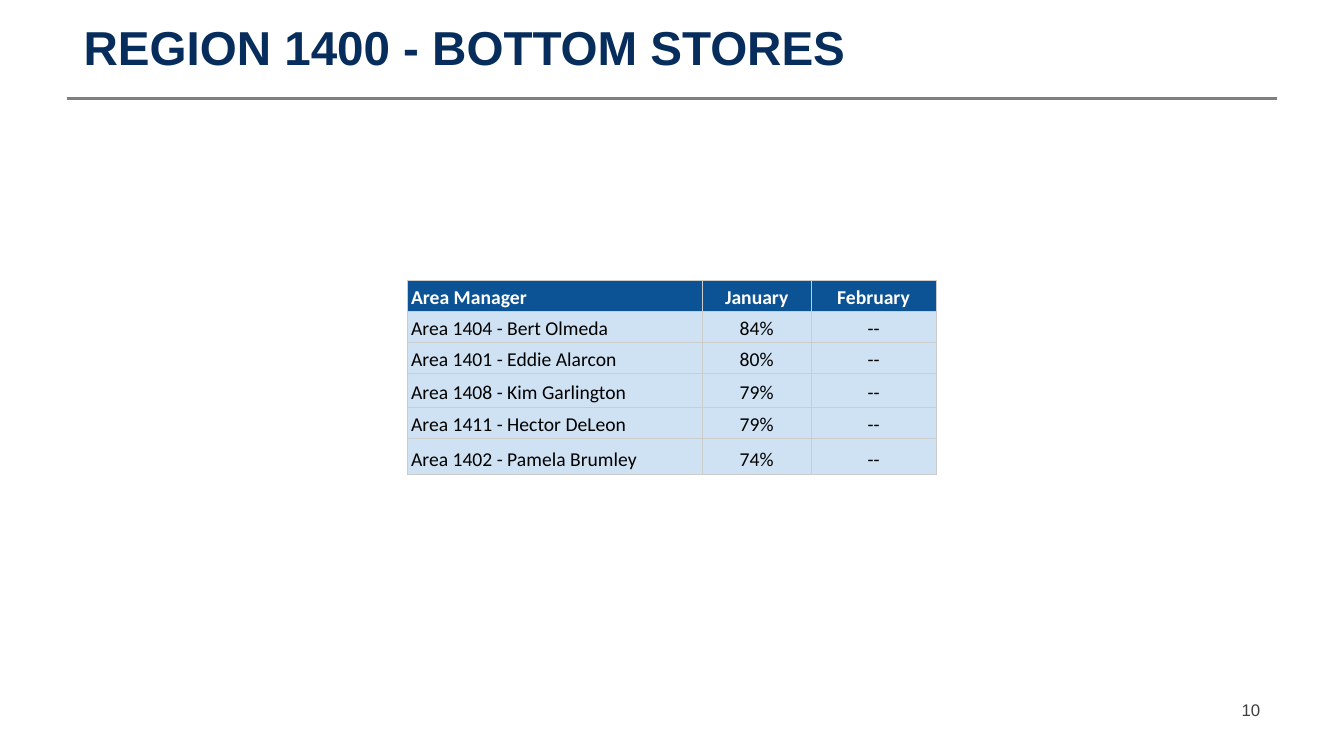
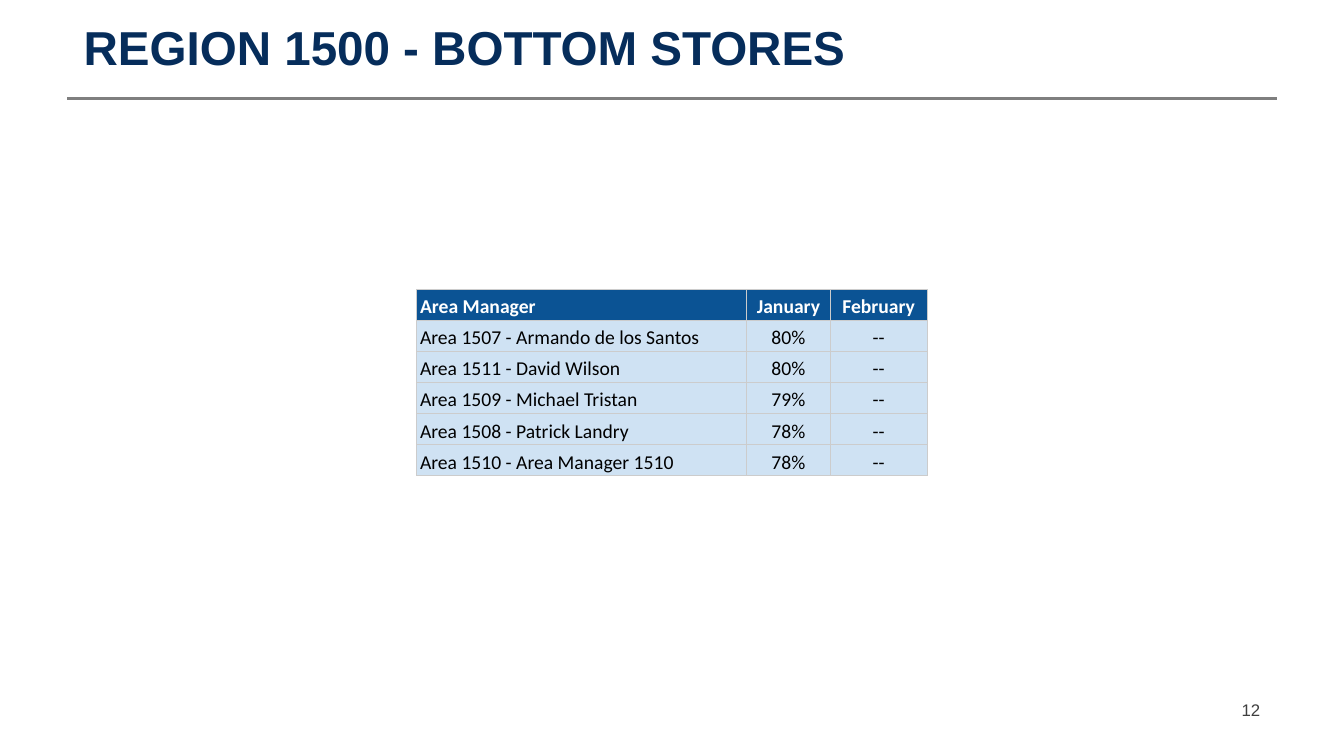
from dataclasses import dataclass

import pptx
import pptx.dml.color
import pptx.enum.shapes
import pptx.enum.text
import pptx.oxml
import pptx.oxml.ns
import pptx.presentation
import pptx.slide
import pptx.table
import pptx.text.text
import pptx.util

Cm = pptx.util.Cm
Pt = pptx.util.Pt
Align = pptx.enum.text.PP_ALIGN
Anchor = pptx.enum.text.MSO_ANCHOR


@dataclass(frozen=True)
class TextStyle:
    font: str
    size: float
    color: str
    bold: bool = False
    line_spacing: float = 1.0


@dataclass(frozen=True)
class Theme:
    title: TextStyle = TextStyle("Arial", 34, "062D5B", True, 0.8)
    page_number: TextStyle = TextStyle("Arial", 12, "3F3F3F")
    header: TextStyle = TextStyle("Calibri", 14, "FFFFFF", True, 1.15)
    body: TextStyle = TextStyle("Calibri", 14, "000000", False, 1.15)
    rule: str = "7F7F7F"
    rule_width: float = 2
    header_fill: str = "0B5394"
    body_fill: str = "CFE2F3"
    border: str = "CCCCCC"
    border_width: float = 0.75


@dataclass(frozen=True)
class Box:
    left: float
    top: float
    width: float
    height: float


@dataclass(frozen=True)
class AreaScore:
    manager: str
    january: str
    february: str = "--"


@dataclass(frozen=True)
class RegionPage:
    title: str
    number: str
    table_top: float
    column_widths: tuple[float, ...]
    row_heights: tuple[float, ...]
    scores: tuple[AreaScore, ...]


THEME = Theme()
SLIDE_WIDTH, SLIDE_HEIGHT = 33.87, 19.05
MARGIN = 1.7
CONTENT_WIDTH = SLIDE_WIDTH - 2 * MARGIN
RULE_TOP = 2.49
TITLE_BOX = Box(MARGIN, 0.79, CONTENT_WIDTH, 1.5)
NUMBER_WIDTH = 7.9
NUMBER_BOX = Box(SLIDE_WIDTH - MARGIN - NUMBER_WIDTH, 17.37, NUMBER_WIDTH, 1.02)
ROW_HEIGHT = 0.71
HEADINGS = AreaScore("Area Manager", "January", "February")

PAGES = (
    RegionPage(
        "REGION 1400 - BOTTOM STORES", "10", 7.07, (7.42, 2.74, 3.15),
        (ROW_HEIGHT,) * 3 + (0.84, ROW_HEIGHT, 0.91),
        (
            AreaScore("Area 1404 - Bert Olmeda", "84%"),
            AreaScore("Area 1401 - Eddie Alarcon", "80%"),
            AreaScore("Area 1408 - Kim Garlington", "79%"),
            AreaScore("Area 1411 - Hector DeLeon", "79%"),
            AreaScore("Area 1402 - Pamela Brumley", "74%"),
        ),
    ),
    RegionPage(
        "REGION 1500 - BOTTOM STORES", "12", 7.3, (8.31, 2.11, 2.44),
        (ROW_HEIGHT,) * 6,
        (
            AreaScore("Area 1507 - Armando de los Santos", "80%"),
            AreaScore("Area 1511 - David Wilson", "80%"),
            AreaScore("Area 1509 - Michael Tristan", "79%"),
            AreaScore("Area 1508 - Patrick Landry", "78%"),
            AreaScore("Area 1510 - Area Manager 1510", "78%"),
        ),
    ),
)


def rgb(color: str) -> pptx.dml.color.RGBColor:
    return pptx.dml.color.RGBColor.from_string(color)


def write(frame: pptx.text.text.TextFrame, text: str, style: TextStyle, align: Align) -> None:
    paragraph = frame.paragraphs[0]
    paragraph.alignment = align
    paragraph.line_spacing = style.line_spacing
    run = paragraph.add_run()
    run.text = text
    run.font.name = style.font
    run.font.size = Pt(style.size)
    run.font.bold = style.bold
    run.font.color.rgb = rgb(style.color)


def add_text(slide: pptx.slide.Slide, box: Box, text: str, style: TextStyle,
             align: Align, anchor: Anchor, inset_y: float) -> None:
    frame = slide.shapes.add_textbox(
        Cm(box.left), Cm(box.top), Cm(box.width), Cm(box.height)).text_frame
    frame.word_wrap = True
    frame.vertical_anchor = anchor
    frame.margin_left = frame.margin_right = Cm(0.41)
    frame.margin_top = frame.margin_bottom = Cm(inset_y)
    write(frame, text, style, align)


def add_rule(slide: pptx.slide.Slide) -> None:
    rule = slide.shapes.add_connector(
        pptx.enum.shapes.MSO_CONNECTOR.STRAIGHT,
        Cm(MARGIN), Cm(RULE_TOP), Cm(SLIDE_WIDTH - MARGIN), Cm(RULE_TOP))
    rule.line.color.rgb = rgb(THEME.rule)
    rule.line.width = Pt(THEME.rule_width)
    properties = rule._element.spPr
    properties.append(properties.makeelement(pptx.oxml.ns.qn("a:effectLst"), {}))


def add_borders(cell: pptx.table._Cell) -> None:
    properties = cell._tc.get_or_add_tcPr()
    for side in ("lnL", "lnR", "lnT", "lnB"):
        properties.append(pptx.oxml.parse_xml(
            f'<a:{side} {pptx.oxml.ns.nsdecls("a")} w="{Pt(THEME.border_width)}">'
            f'<a:solidFill><a:srgbClr val="{THEME.border}"/></a:solidFill></a:{side}>'))


def fill_cell(cell: pptx.table._Cell, text: str, style: TextStyle,
              fill: str, align: Align) -> None:
    cell.vertical_anchor = Anchor.BOTTOM
    cell.margin_left = cell.margin_right = Cm(0.08)
    cell.margin_top = cell.margin_bottom = Cm(0.05)
    add_borders(cell)
    cell.fill.solid()
    cell.fill.fore_color.rgb = rgb(fill)
    write(cell.text_frame, text, style, align)


def add_scores(slide: pptx.slide.Slide, page: RegionPage) -> None:
    rows = (HEADINGS,) + page.scores
    width = sum(page.column_widths)
    table = slide.shapes.add_table(
        len(rows), len(page.column_widths), Cm((SLIDE_WIDTH - width) / 2),
        Cm(page.table_top), Cm(width), Cm(sum(page.row_heights))).table
    table.horz_banding = False
    for column, column_width in zip(table.columns, page.column_widths):
        column.width = Cm(column_width)
    for row_index, (score, height) in enumerate(zip(rows, page.row_heights)):
        table.rows[row_index].height = Cm(height)
        is_header = row_index == 0
        style = THEME.header if is_header else THEME.body
        fill = THEME.header_fill if is_header else THEME.body_fill
        for column_index, text in enumerate((score.manager, score.january, score.february)):
            align = Align.CENTER if column_index else Align.LEFT
            fill_cell(table.cell(row_index, column_index), text, style, fill, align)


def add_page(deck: pptx.presentation.Presentation, page: RegionPage) -> None:
    slide = deck.slides.add_slide(deck.slide_layouts[6])
    add_rule(slide)
    add_text(slide, TITLE_BOX, page.title, THEME.title, Align.LEFT, Anchor.BOTTOM, 0.41)
    add_text(slide, NUMBER_BOX, page.number, THEME.page_number,
             Align.RIGHT, Anchor.MIDDLE, 0.2)
    add_scores(slide, page)


def main() -> None:
    deck = pptx.Presentation()
    deck.slide_width = Cm(SLIDE_WIDTH)
    deck.slide_height = Cm(SLIDE_HEIGHT)
    for page in PAGES:
        add_page(deck, page)
    deck.save("out.pptx")


if __name__ == "__main__":
    main()
